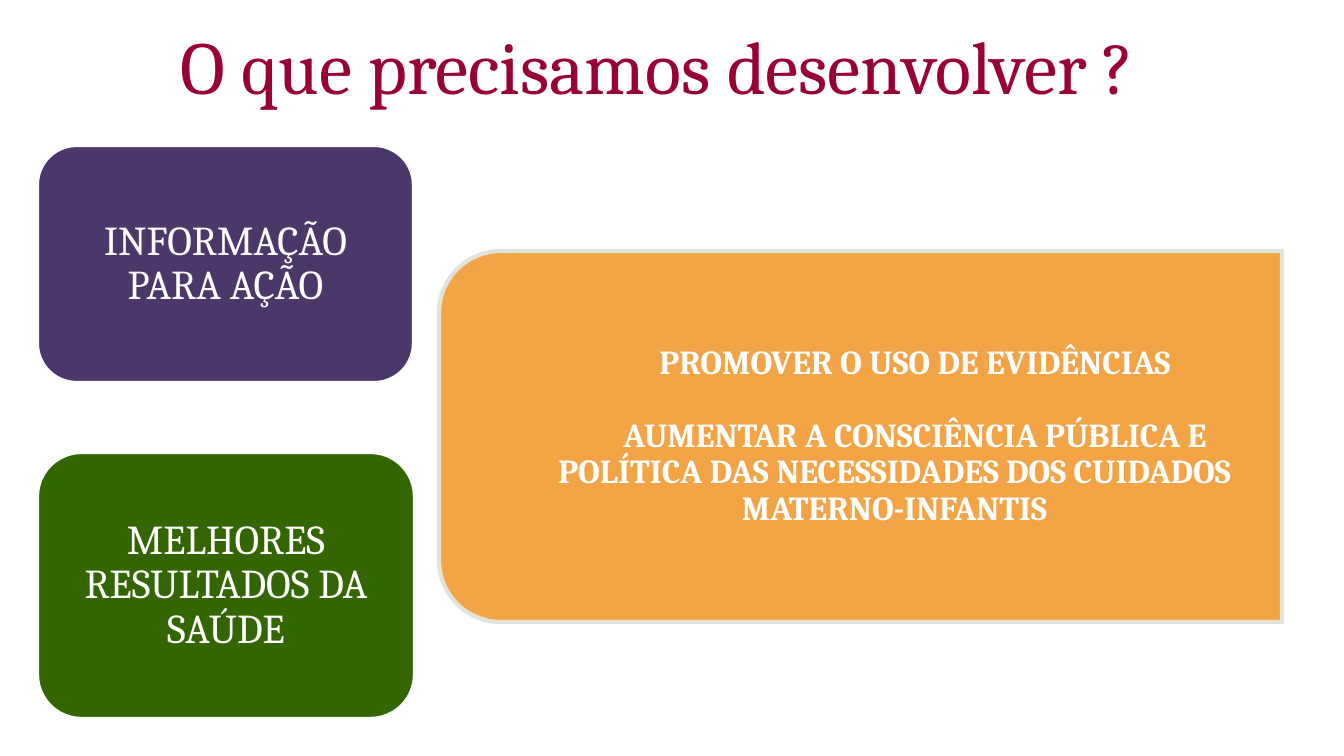
from lxml.etree import SubElement
from pptx import Presentation
from pptx.dml.color import RGBColor
from pptx.enum.shapes import MSO_SHAPE
from pptx.enum.text import MSO_ANCHOR, PP_ALIGN
from pptx.oxml.ns import qn
from pptx.util import Pt

PX = 914400 / 100.8
WHITE = RGBColor(255, 255, 255)
WINE = RGBColor(0x99, 0, 0x33)
AMBER = RGBColor(0xF3, 0xA4, 0x47)
MIST = RGBColor(0xE0, 0xE5, 0xDB)
PLUM = RGBColor(0x4C, 0x37, 0x6B)
GREEN = RGBColor(0x33, 0x66, 0)

# Content
TITLE = "O que precisamos desenvolver ? "
GOALS = [
    " PROMOVER O USO DE EVIDÊNCIAS",
    " AUMENTAR A CONSCIÊNCIA PÚBLICA E POLÍTICA DAS NECESSIDADES "
    "DOS CUIDADOS MATERNO-INFANTIS",
]
CARDS = [  # text, fill, top, width, height
    ("INFORMAÇÃO PARA AÇÃO", PLUM, 145, 377, 238),
    ("MELHORES RESULTADOS DA SAÚDE", GREEN, 452, 378, 267),
]
LEFT = 37
CLOCK = "·"  # the clock face in Wingdings


def px(n):
    return round(n * PX)


def add_box(kind, x, y, w, h, fill, line, pad, lines, size, color, bold=False):
    box = slide.shapes.add_shape(kind, px(x), px(y), px(w), px(h))
    box.shadow.inherit = False
    box.fill.solid()
    box.fill.fore_color.rgb = fill
    if line is None:
        box.line.fill.background()
    else:
        box.line.color.rgb = line
        box.line.width = Pt(3)
    frame = box.text_frame
    frame.word_wrap = True
    frame.vertical_anchor = MSO_ANCHOR.MIDDLE
    frame.margin_left = frame.margin_right = px(pad[0])
    frame.margin_top = frame.margin_bottom = px(pad[1])
    for i, text in enumerate(lines):
        para = frame.paragraphs[0] if i == 0 else frame.add_paragraph()
        para.text = text
        para.alignment = PP_ALIGN.CENTER
        para.line_spacing = 0.9
        font = para.font
        font.name, font.size, font.bold = "Cambria", Pt(size), bold
        font.color.rgb = color
    return box


def add_bullet(para):
    props = para._p.get_or_add_pPr()
    props.set("marL", str(px(50)))
    props.set("indent", "0")
    face = SubElement(props, qn("a:buFont"), typeface="Wingdings",
                      pitchFamily="2", charset="2")
    mark = SubElement(props, qn("a:buChar"), char=CLOCK)
    base = props.find(qn("a:defRPr"))
    for part in (face, mark):
        base.addprevious(part)


deck = Presentation()
deck.slide_width, deck.slide_height = px(1344), px(756)
slide = deck.slides.add_slide(deck.slide_layouts[6])

# Title
title = add_box(MSO_SHAPE.RECTANGLE, 68, 13, 1195, 95, WHITE, None,
                (13, 7), [TITLE], 53.3, WINE)
title.text_frame.vertical_anchor = MSO_ANCHOR.TOP
title.text_frame.paragraphs[0].line_spacing = 1.0

# Goals panel: turned on its side, with the text turned back upright
panel = add_box(MSO_SHAPE.ROUND_2_SAME_RECTANGLE, 675, 15, 371, 843, AMBER, MIST,
                (18, 36), GOALS, 24, WHITE, True)
panel.rotation = 270
panel.text_frame._txBody.bodyPr.set("vert", "vert")
for i, para in enumerate(panel.text_frame.paragraphs):
    para.level = 1
    if i:
        para.space_before = Pt(26)
    add_bullet(para)

# Cards
for text, fill, top, wide, high in CARDS:
    add_box(MSO_SHAPE.ROUNDED_RECTANGLE, LEFT, top, wide, high, fill, WHITE,
            (12, 6), [text], 29.3, WHITE)

deck.save("out.pptx")
